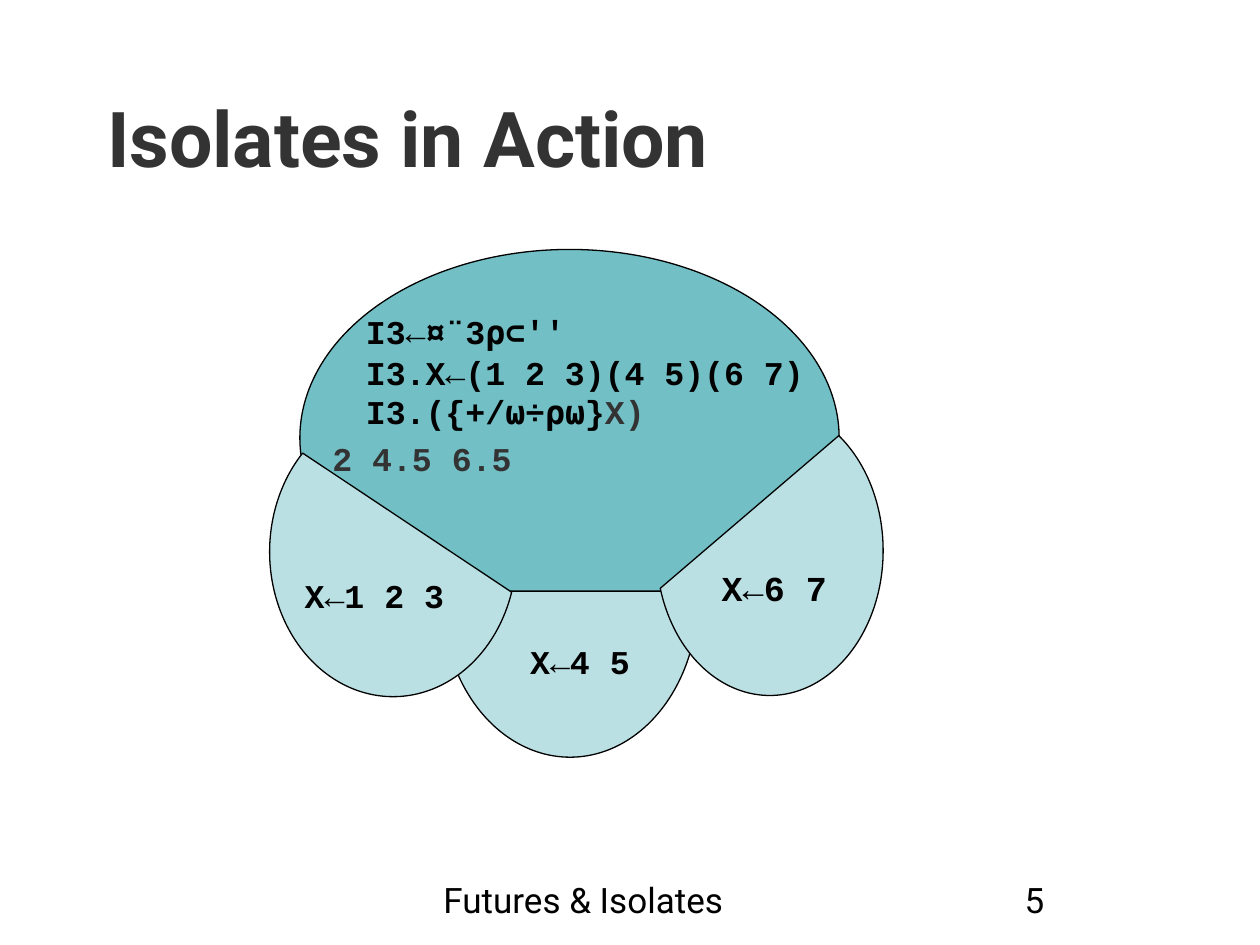
import pptx
import pptx.dml.color
import pptx.enum.shapes
import pptx.enum.text
import pptx.oxml.ns
import pptx.util
from pptx.util import Inches

BLACK = pptx.dml.color.RGBColor(0x00, 0x00, 0x00)
CHARCOAL = pptx.dml.color.RGBColor(0x33, 0x33, 0x33)
TEAL = pptx.dml.color.RGBColor(0x72, 0xBF, 0xC5)
PALE_TEAL = pptx.dml.color.RGBColor(0xBB, 0xE0, 0xE3)
SHAPE = pptx.enum.shapes.MSO_SHAPE
ALIGN = pptx.enum.text.PP_ALIGN
TITLE_FONT, CODE_FONT = "Roboto", "Courier New"


def place(shape, box):
    shape.left, shape.top, shape.width, shape.height = map(Inches, box)


def set_font(font, name, size, color, bold):
    font.name, font.size, font.bold = name, pptx.util.Pt(size), bold
    font.color.rgb = color


def add_text(page, box, text, size, name=CODE_FONT, color=BLACK, bold=True,
             align=ALIGN.LEFT):
    shape = page.shapes.add_textbox(*map(Inches, box))
    shape.text_frame.word_wrap = True
    para = shape.text_frame.paragraphs[0]
    para.text, para.alignment = text, align
    set_font(para.font, name, size, color, bold)
    return para


def add_title(page, box):
    title = page.shapes.title
    place(title, box)
    frame = title.text_frame
    frame.text = "Isolates in Action"
    frame.auto_size = pptx.enum.text.MSO_AUTO_SIZE.NONE
    frame.vertical_anchor = pptx.enum.text.MSO_ANCHOR.TOP
    frame.paragraphs[0].alignment = ALIGN.LEFT
    set_font(frame.paragraphs[0].font, TITLE_FONT, 44, CHARCOAL, True)


def add_blob(page, kind, box, fill):
    shape = page.shapes.add_shape(kind, *map(Inches, box))
    shape.shadow.inherit = False
    shape.fill.solid()
    shape.fill.fore_color.rgb = fill
    shape.line.color.rgb = BLACK
    shape.line.width = pptx.util.Pt(0.75)
    return shape


def add_isolate(page, box, start, end, flipped):
    """Add a chord running clockwise between two angles in degrees."""
    chord = add_blob(page, SHAPE.CHORD, box, PALE_TEAL)
    # Angles are stored as 60000ths of a degree, adjustments as 100000ths.
    for index, angle in enumerate((start, end)):
        chord.adjustments[index] = angle * 0.6
    if flipped:
        chord.element.spPr.find(pptx.oxml.ns.qn("a:xfrm")).set("flipH", "1")


def add_workspace(page, box):
    """Add the main workspace with its three isolates."""
    add_blob(page, SHAPE.OVAL, box, TEAL)
    for isolate in (
        ((3.51, 3.48, 2.03, 2.53), 357, 183, True),
        ((5.21, 3.22, 1.8, 2.3), 19, 239, True),
        ((2.14, 3.23, 1.96, 2.3), 18.8, 227.5, False),
    ):
        add_isolate(page, *isolate)


def add_isolate_values(page):
    for box, text, size in (
        ((2.32, 4.52, 1.61, 0.42), "X←1 2 3", 19),
        ((4.11, 5.04, 1.29, 0.42), "X←4 5", 19),
        ((5.63, 4.45, 1.26, 0.44), "X←6 7", 20),
    ):
        add_text(page, box, text, size)


def add_session(page, left, width, height):
    """Add the lines of code typed in the main workspace, and the result."""
    for top, code in ((2.42, "  I3←¤¨3⍴⊂''"),
                      (2.75, "  I3.X←(1 2 3)(4 5)(6 7)")):
        add_text(page, (left, top, width, height), code, 19)
    para = add_text(page, (left, 3.06, width, height), "  I3.({+/⍵÷⍴⍵}", 19)
    span = para.add_run()
    span.text = "X)"
    span.font.color.rgb = CHARCOAL
    add_text(page, (left + 0.05, 3.43, width, height), "2 4.5 6.5", 19,
             color=CHARCOAL)


def add_footer(page, top, height):
    add_text(page, (3.42, top, 3.17, height), "Futures & Isolates", 20,
             TITLE_FONT, bold=False)
    add_text(page, (7.17, top, 2.08, height), "5", 20, TITLE_FONT,
             bold=False, align=ALIGN.CENTER)


def main():
    deck = pptx.Presentation()
    deck.slide_width, deck.slide_height = Inches(10), Inches(7.5)
    page = deck.slides.add_slide(deck.slide_layouts.get_by_name("Title Only"))
    add_title(page, (0.75, 0.67, 8.5, 1.25))
    add_workspace(page, (2.38, 1.98, 4.28, 2.99))
    add_isolate_values(page)
    add_session(page, 2.49, 4.6, 0.42)
    add_footer(page, 6.92, 0.5)
    deck.save("out.pptx")


if __name__ == "__main__":
    main()
